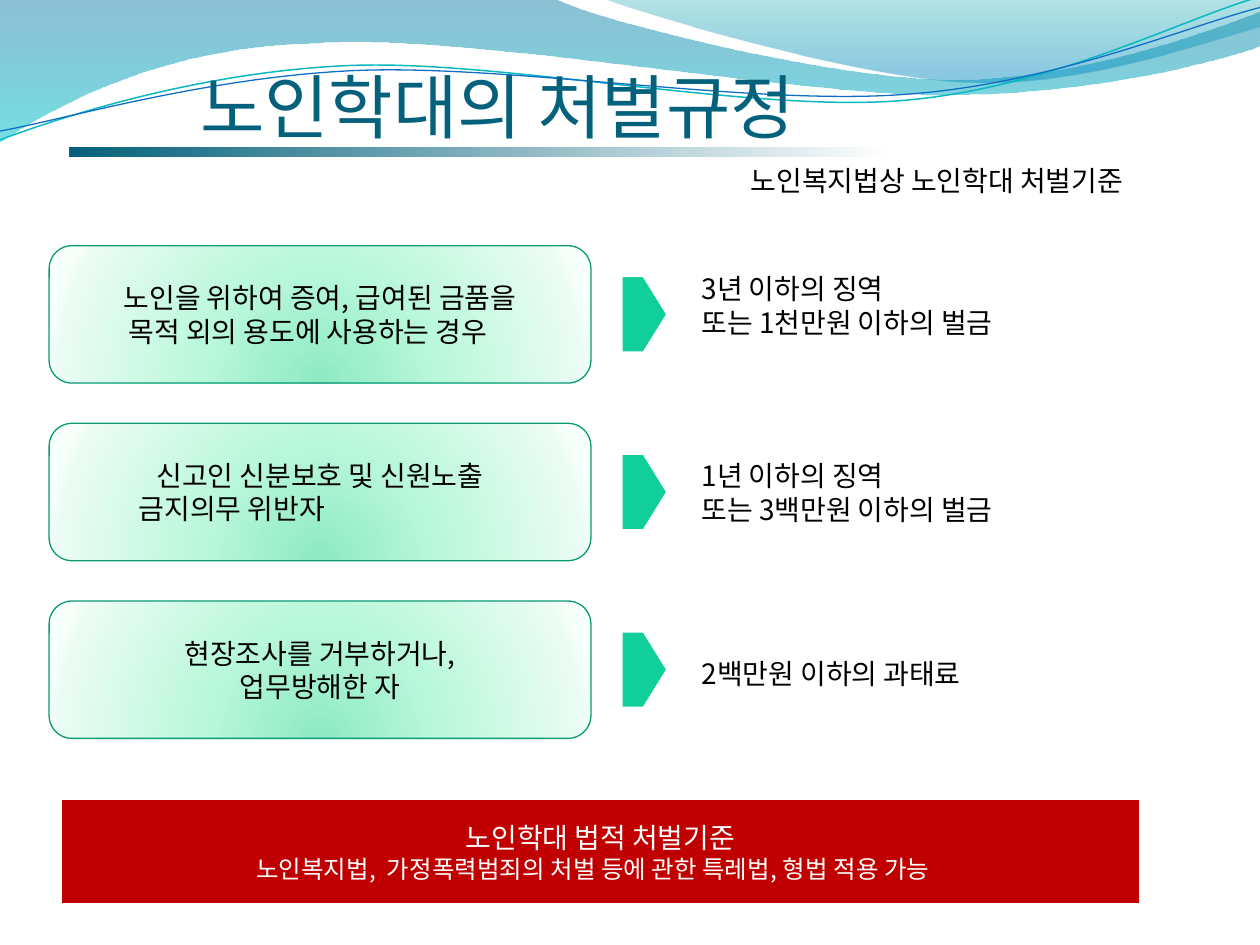
"""Build a slide on the penalties for elder abuse."""
import math

import pptx
import pptx.dml.color
import pptx.enum.shapes
import pptx.enum.text
import pptx.oxml
import pptx.oxml.ns
import pptx.util

Inches = pptx.util.Inches
Pt = pptx.util.Pt
RGB = pptx.dml.color.RGBColor
Kind = pptx.enum.shapes.MSO_SHAPE
Align = pptx.enum.text.PP_ALIGN
Anchor = pptx.enum.text.MSO_ANCHOR
qn = pptx.oxml.ns.qn
SPACE = pptx.oxml.ns.nsdecls("a")

BLACK = RGB(0x00, 0x00, 0x00)
WHITE = RGB(0xFF, 0xFF, 0xFF)
NAVY = RGB(0x04, 0x61, 0x7B)
RED = RGB(0xC0, 0x00, 0x00)
MINT = RGB(0x10, 0xCF, 0x9B)
GREEN = RGB(0x0A, 0x9B, 0x74)
TEAL = RGB(0x0A, 0xB8, 0xBF)
BLUE = RGB(0x0F, 0x6F, 0xC6)
SEA = [(0, RGB(0x00, 0x74, 0xA1), 45), (100, RGB(0x00, 0xC6, 0xCF), 55)]
SKY = [(0, RGB(0x00, 0xA1, 0xA9), 30), (80, RGB(0x00, 0x8B, 0xBF), 45)]
FADE = [(0, NAVY, 100), (100, WHITE, 100)]
GLOW = [(0, RGB(0x8D, 0xEA, 0xC2), 100), (43, RGB(0xBA, 0xF8, 0xDB), 100),
        (93, RGB(0xEA, 0xFC, 0xF3), 100), (100, RGB(0xF7, 0xFF, 0xFB), 100)]
DOWN, ACROSS = '<a:lin ang="5400000"/>', '<a:lin ang="0"/>'
ROUND = ('<a:path path="circle"><a:fillToRect l="50000" t="130000" '
         'r="50000" b="-30000"/></a:path>')

SWEEP = [(0, 0), (4.4, -0.01), (4.76, 0.17, 6.64, 0.63, 7.58, 0.63),
         (8.53, 0.63, 9.58, 0.26, 10, 0.09), (10.01, 0.36),
         (9.83, 0.44, 8.7, 0.76, 7.46, 0.75), (6.22, 0.75, 3.82, 0.28, 2.57, 0.34),
         (1.29, 0.36, 0.46, 0.83, -0.01, 1.13), (0, 0)]
CREST = [(4.79, -0.01), (5.09, 0.11, 6.82, 0.62, 7.69, 0.65),
         (8.56, 0.69, 9.61, 0.32, 10, 0.21), (10, 0), (4.79, -0.01)]
UPPER = [(0, 1.11), (0.48, 0.93, 1.58, 0.57, 2.77, 0.52),
         (3.95, 0.47, 5.93, 0.89, 7.13, 0.8), (8.33, 0.71, 9.38, 0.15, 9.98, -0.02)]
LOWER = [(0, 1.04), (0.47, 0.96, 1.64, 0.61, 2.83, 0.56),
         (4.03, 0.51, 5.97, 0.84, 7.17, 0.75), (8.36, 0.67, 9.41, 0.21, 10, 0.06)]

CASES = [
    ([("노인을 위하여 증여, 급여된 금품을", {}),
      ("목적 외의 용도에 사용하는 경우", {"right": 0.19})],
     ["3년 이하의 징역", "또는 1천만원 이하의 벌금"], 2.11),
    ([("신고인 신분보호 및 신원노출", {}),
      ("금지의무 위반자", {"align": Align.LEFT, "left": 0.56})],
     ["1년 이하의 징역", "또는 3백만원 이하의 벌금"], 3.59),
    ([("현장조사를 거부하거나,", {}), ("업무방해한 자", {})],
     ["2백만원 이하의 과태료"], 5.16),
]


def write(para, text, size=16, color=BLACK, font="Noto Sans CJK KR",
          align=Align.LEFT, left=0, right=0):
    run = para.add_run()
    run.text = text
    run.font.size, run.font.name = Pt(size), font
    run.font.color.rgb = color
    para.alignment = align
    props = para._p.get_or_add_pPr()
    if left:
        props.set("marL", str(Inches(left)))
    if right:
        props.set("marR", str(Inches(right)))


def spin(dot, hub, angle):
    x, y = dot[0] - hub[0], dot[1] - hub[1]
    cos, sin = math.cos(math.radians(angle)), math.sin(math.radians(angle))
    return hub[0] + x * cos - y * sin, hub[1] + x * sin + y * cos


class Board:
    """Hold the style and the current slide."""

    def __init__(self, slide):
        self.shapes = slide.shapes

    def paint(self, shape, fill=None, line=None, width=0.75, way=None):
        shape.shadow.inherit = False
        if line is None:
            shape.line.fill.background()
        else:
            shape.line.color.rgb = line
            shape.line.width = Pt(width)
        if fill is None:
            shape.fill.background()
            return
        shape.fill.solid()
        if not isinstance(fill, list):
            shape.fill.fore_color.rgb = fill
            return
        stops = "".join(
            f'<a:gs pos="{pos * 1000}"><a:srgbClr val="{color}">'
            f'<a:alpha val="{alpha * 1000}"/></a:srgbClr></a:gs>'
            for pos, color, alpha in fill)
        grad = pptx.oxml.parse_xml(
            f'<a:gradFill {SPACE} rotWithShape="1">'
            f'<a:gsLst>{stops}</a:gsLst>{way}</a:gradFill>')
        props = shape._element.spPr
        props.replace(props.find(qn("a:solidFill")), grad)

    def wave(self, nodes, closed=False, tilt=0, hub=(0, 0), **look):
        dots = [spin(node[i:i + 2], hub, -tilt)
                for node in nodes for i in range(0, len(node), 2)]
        dots = [(Inches(x), Inches(y)) for x, y in dots]
        pen = self.shapes.build_freeform(*dots[0], scale=1.0)
        pen.add_line_segments(dots[1:], close=closed)
        shape = pen.convert_to_shape()
        parts = iter(shape._element.spPr.findall(".//" + qn("a:lnTo")))
        for node in nodes[1:]:
            first = next(parts)
            if len(node) == 6:
                curve = pptx.oxml.parse_xml(f"<a:cubicBezTo {SPACE}/>")
                first.addprevious(curve)
                for part in (first, next(parts), next(parts)):
                    curve.append(part[0])
                    part.getparent().remove(part)
        shape.rotation = tilt
        self.paint(shape, **look)

    def fill_text(self, frame, lines, anchor, **style):
        frame.word_wrap = True
        frame.vertical_anchor = anchor
        for i, (text, extra) in enumerate(lines):
            para = frame.add_paragraph() if i else frame.paragraphs[0]
            write(para, text, **{**style, **extra})

    def block(self, kind, area, lines=(), color=BLACK, **look):
        shape = self.shapes.add_shape(kind, *map(Inches, area))
        self.paint(shape, **look)
        self.fill_text(shape.text_frame, lines, Anchor.MIDDLE,
                       color=color, align=Align.CENTER)

    def label(self, area, lines, anchor=Anchor.TOP, inset=0.1, **style):
        frame = self.shapes.add_textbox(*map(Inches, area)).text_frame
        frame.margin_left = frame.margin_right = Inches(inset)
        if anchor == Anchor.BOTTOM:
            frame.margin_bottom = 0
        self.fill_text(frame, [(text, {}) for text in lines], anchor, **style)


def main():
    deck = pptx.Presentation()
    deck.slide_width, deck.slide_height = Inches(10), Inches(7.5)
    board = Board(deck.slides.add_slide(deck.slide_layouts[6]))

    board.wave(SWEEP, closed=True, fill=SEA, way=DOWN)
    board.wave(CREST, closed=True, fill=SKY, way=DOWN)
    board.wave(UPPER, tilt=-2.7, hub=(4.99, 0.58), line=TEAL, width=0.85)
    board.wave(LOWER, tilt=-2.7, hub=(5, 0.59), line=BLUE)

    board.label((0.5, 0.3, 9, 0.87), ["노인학대의 처벌규정"], Anchor.BOTTOM, 0,
                size=40, color=NAVY, font="Calibri", left=1.09)
    board.block(Kind.RECTANGLE, (0.55, 1.17, 6.54, 0.08), fill=FADE, way=ACROSS)
    board.label((5.86, 1.25, 3.91, 0.37), ["노인복지법상 노인학대 처벌기준"])

    for row, (case, fine, top) in enumerate(CASES):
        y = 1.95 + 1.41 * row
        board.block(Kind.ROUNDED_RECTANGLE, (0.39, y, 4.3, 1.09), case,
                    fill=GLOW, way=ROUND, line=GREEN)
        board.block(Kind.PENTAGON, (4.92, y + 0.23, 0.39, 0.63),
                    fill=MINT, line=WHITE, width=3)
        board.label((5.47, top, 3.67, 0.1 + 0.27 * len(fine)), fine)

    board.block(Kind.RECTANGLE, (0.47, 6.33, 8.59, 0.86),
                [("노인학대 법적 처벌기준", {}),
                 ("노인복지법,  가정폭력범죄의 처벌 등에 관한 특레법, 형법 적용 가능",
                  {"size": 14, "right": 0.12})],
                color=WHITE, fill=RED, line=WHITE, width=3)
    deck.save("out.pptx")


if __name__ == "__main__":
    main()
